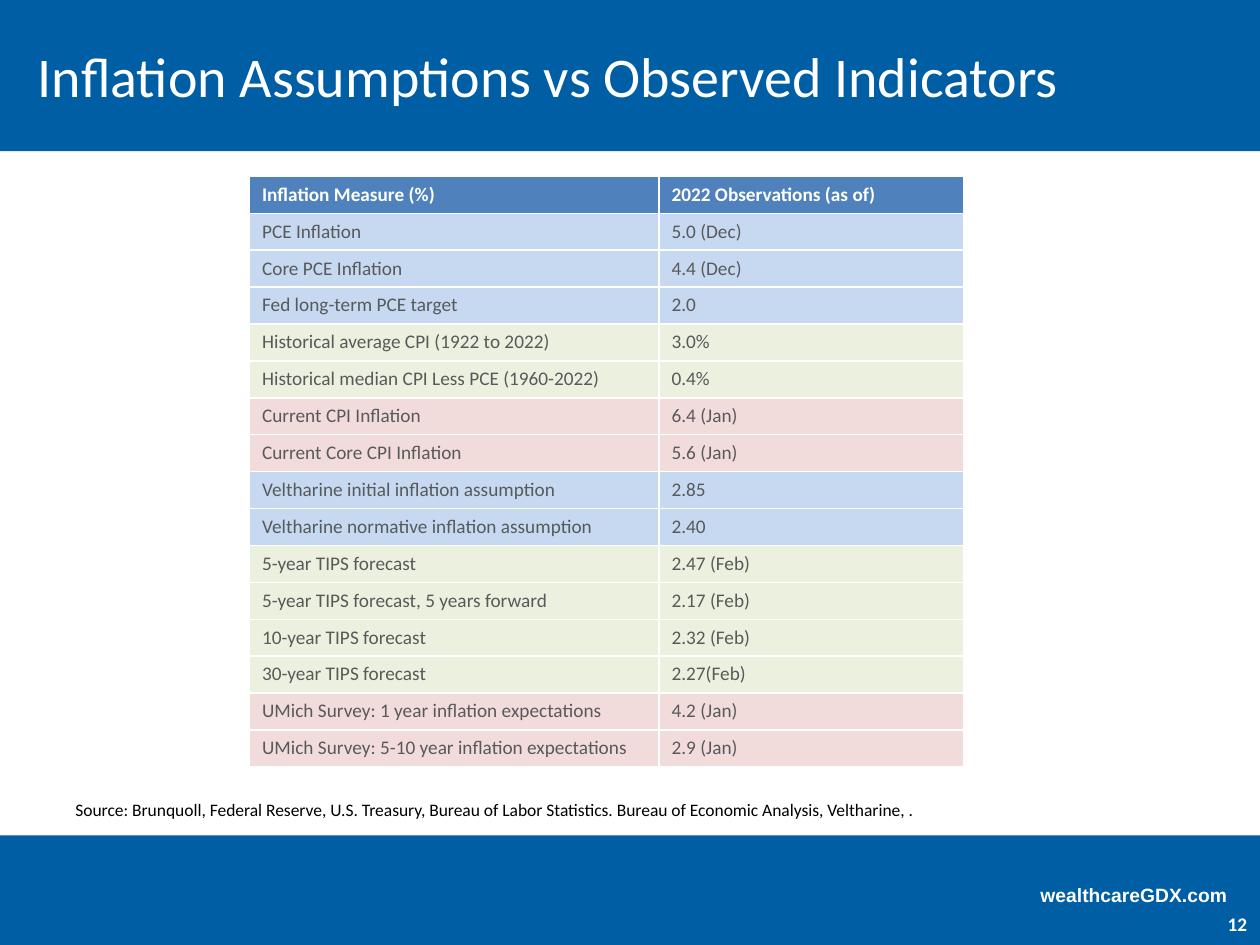
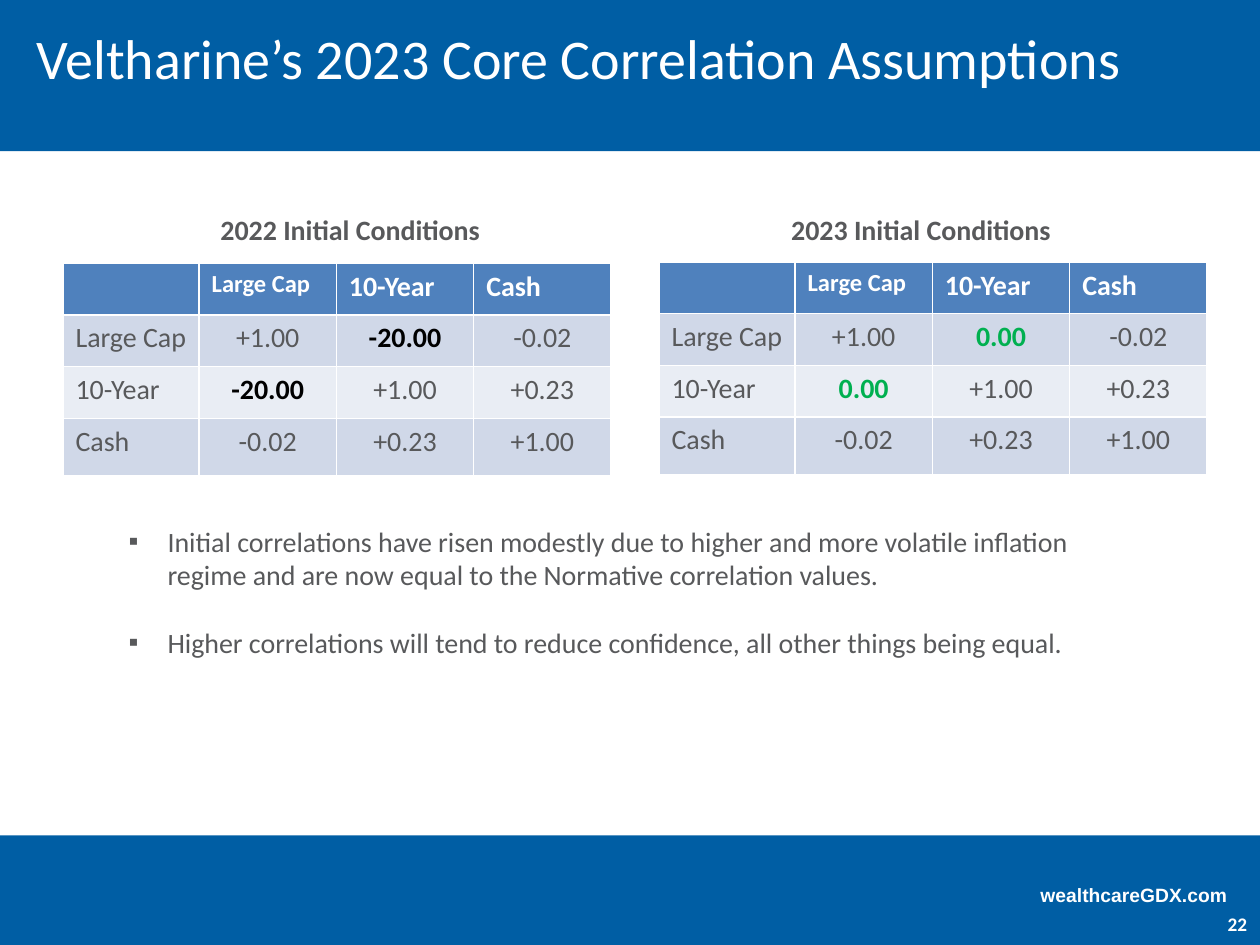
from dataclasses import dataclass
from lxml.etree import SubElement
from pptx import Presentation
from pptx.dml.color import RGBColor
from pptx.enum.shapes import MSO_SHAPE
from pptx.enum.text import MSO_ANCHOR, MSO_AUTO_SIZE, PP_ALIGN
from pptx.oxml.ns import qn
from pptx.util import Inches, Pt


@dataclass(frozen=True)
class Theme:
    font: str = "Calibri"
    blue: str = "005EA4"
    head: str = "4F81BD"
    sky: str = "C6D9F1"
    sage: str = "EBF1DE"
    rose: str = "F2DCDB"
    dark: str = "D0D8E8"
    light: str = "E9EDF4"
    gray: str = "58595B"
    green: str = "00B050"
    black: str = "000000"
    white: str = "FFFFFF"
    title: int = 32
    text: int = 16
    label: int = 14
    small: int = 11
    note: int = 10


T = Theme()


def write(para, text, size, color, bold=False, align=PP_ALIGN.LEFT, font=T.font):
    para.text = text
    para.alignment = align
    para.font.name = font
    para.font.size = Pt(size)
    para.font.bold = bold
    para.font.color.rgb = RGBColor.from_string(color)


def add_text(slide, box, text, size, color, **style):
    shape = slide.shapes.add_textbox(*map(Inches, box))
    shape.text_frame.word_wrap = True
    write(shape.text_frame.paragraphs[0], text, size, color, **style)
    return shape


prs = Presentation()
prs.slide_width, prs.slide_height = Inches(10), Inches(7.5)
rates = prs.slides.add_slide(prs.slide_layouts[5])
links = prs.slides.add_slide(prs.slide_layouts[1])

# Bands and web address, moved to the master
master = prs.slide_master.shapes.element
for top, height in ((0, 1.2), (6.63, 0.87)):
    band = rates.shapes.add_shape(
        MSO_SHAPE.RECTANGLE, 0, Inches(top), Inches(10), Inches(height))
    band.shadow.inherit = False
    band.fill.solid()
    band.fill.fore_color.rgb = RGBColor.from_string(T.blue)
    band.line.fill.background()
    master.append(band.element)
site = add_text(rates, (8.16, 6.96, 1.7, 0.29), "wealthcareGDX.com",
                T.small, T.white, bold=True, font="Arial")
site.text_frame.word_wrap = False
master.append(site.element)

# Titles and page numbers
heads = (
    (rates, "Inflation Assumptions vs Observed Indicators", (0.2, 0, 9.8, 1.2), "12"),
    (links, "Veltharine’s 2023 Core Correlation Assumptions", (0.19, 0.02, 9.8, 0.86), "22"),
)
for slide, text, box, page in heads:
    title = slide.shapes.title
    title.left, title.top, title.width, title.height = map(Inches, box)
    title.text_frame.auto_size = MSO_AUTO_SIZE.NONE
    title.text_frame.vertical_anchor = MSO_ANCHOR.MIDDLE
    write(title.text_frame.paragraphs[0], text, T.title, T.white)
    frame = add_text(slide, (9.64, 7.24, 0.36, 0.26), page, T.small, T.white,
                     bold=True, align=PP_ALIGN.CENTER).text_frame
    frame.margin_left = frame.margin_right = frame.margin_top = frame.margin_bottom = 0

# Inflation table: rows grouped by fill
groups = (
    (T.head, (("Inflation Measure (%)", "2022 Observations (as of)"),)),
    (T.sky, (("PCE Inflation", "5.0 (Dec)"),
             ("Core PCE Inflation", "4.4 (Dec)"),
             ("Fed long-term PCE target", "2.0"))),
    (T.sage, (("Historical average CPI (1922 to 2022)", "3.0%"),
              ("Historical median CPI Less PCE (1960-2022)", "0.4%"))),
    (T.rose, (("Current CPI Inflation", "6.4 (Jan)"),
              ("Current Core CPI Inflation", "5.6 (Jan)"))),
    (T.sky, (("Veltharine initial inflation assumption", "2.85"),
             ("Veltharine normative inflation assumption", "2.40"))),
    (T.sage, (("5-year TIPS forecast", "2.47 (Feb)"),
              ("5-year TIPS forecast, 5 years forward", "2.17 (Feb)"),
              ("10-year TIPS forecast", "2.32 (Feb)"),
              ("30-year TIPS forecast", "2.27(Feb)"))),
    (T.rose, (("UMich Survey: 1 year inflation expectations", "4.2 (Jan)"),
              ("UMich Survey: 5-10 year inflation expectations", "2.9 (Jan)"))),
)
rows = [(fill, row) for fill, part in groups for row in part]
table = rates.shapes.add_table(len(rows), 2, Inches(1.98), Inches(1.4),
                               Inches(5.67), Inches(4.69)).table
table.columns[0].width, table.columns[1].width = Inches(3.25), Inches(2.42)
for r, (fill, row) in enumerate(rows):
    for c, text in enumerate(row):
        cell = table.cell(r, c)
        cell.fill.solid()
        cell.fill.fore_color.rgb = RGBColor.from_string(fill)
        write(cell.text_frame.paragraphs[0], text, T.small,
              T.gray if r else T.white, bold=r == 0)

add_text(rates, (0.5, 6.29, 7.64, 0.27),
         "Source: Brunquoll, Federal Reserve, U.S. Treasury, Bureau of Labor "
         "Statistics. Bureau of Economic Analysis, Veltharine, .", T.note, T.black)

# Correlation tables: only the stock and bond pair differs
names = ("Large Cap", "10-Year", "Cash")
years = (
    ("2022", 1.07, 0.5, 2.09, "-20.00", T.black),
    ("2023", 5.6, 5.23, 2.08, "0.00", T.green),
)
for year, mid, left, top, pair, tint in years:
    add_text(links, (mid, 1.64, 3.42, 0.37), f"{year} Initial Conditions",
             T.text, T.gray, bold=True, align=PP_ALIGN.CENTER)
    grid = (
        ("", *names),
        (names[0], "+1.00", pair, "-0.02"),
        (names[1], pair, "+1.00", "+0.23"),
        (names[2], "-0.02", "+0.23", "+1.00"),
    )
    table = links.shapes.add_table(4, 4, Inches(left), Inches(top),
                                   Inches(4.36), Inches(1.67)).table
    for i in range(4):
        table.columns[i].width = Inches(1.09 if i else 1.08)
        table.rows[i].height = Inches(0.46 if i == 3 else 0.41)
    for r, row in enumerate(grid):
        fill = T.head if r == 0 else T.dark if r % 2 else T.light
        for c, text in enumerate(row):
            cell = table.cell(r, c)
            cell.fill.solid()
            cell.fill.fore_color.rgb = RGBColor.from_string(fill)
            key = text == pair
            write(cell.text_frame.paragraphs[0], text,
                  T.label if (r, c) == (0, 1) else T.text,
                  T.white if r == 0 else tint if key else T.gray,
                  bold=r == 0 or key,
                  align=PP_ALIGN.CENTER if r and c else PP_ALIGN.LEFT)

# Bullet list
notes = (
    "Initial correlations have risen modestly due to higher and more volatile "
    "inflation regime and are now equal to the Normative correlation values.",
    "Higher correlations will tend to reduce confidence, all other things being equal.",
)
body = links.placeholders[1]
body.left, body.top, body.width, body.height = map(Inches, (0.92, 4.11, 7.94, 1.48))
frame = body.text_frame
frame.auto_size = MSO_AUTO_SIZE.NONE
for i, text in enumerate(notes):
    para = frame.add_paragraph() if i else frame.paragraphs[0]
    props = para._p.get_or_add_pPr()
    props.set("marL", str(Inches(0.31)))
    props.set("indent", str(-Inches(0.31)))
    SubElement(props, qn("a:buFont"), typeface="Arial")
    SubElement(props, qn("a:buChar"), char="▪")
    para.space_before = Pt(19.5 if i else 0)
    write(para, text, T.text, T.gray)

prs.save("out.pptx")
